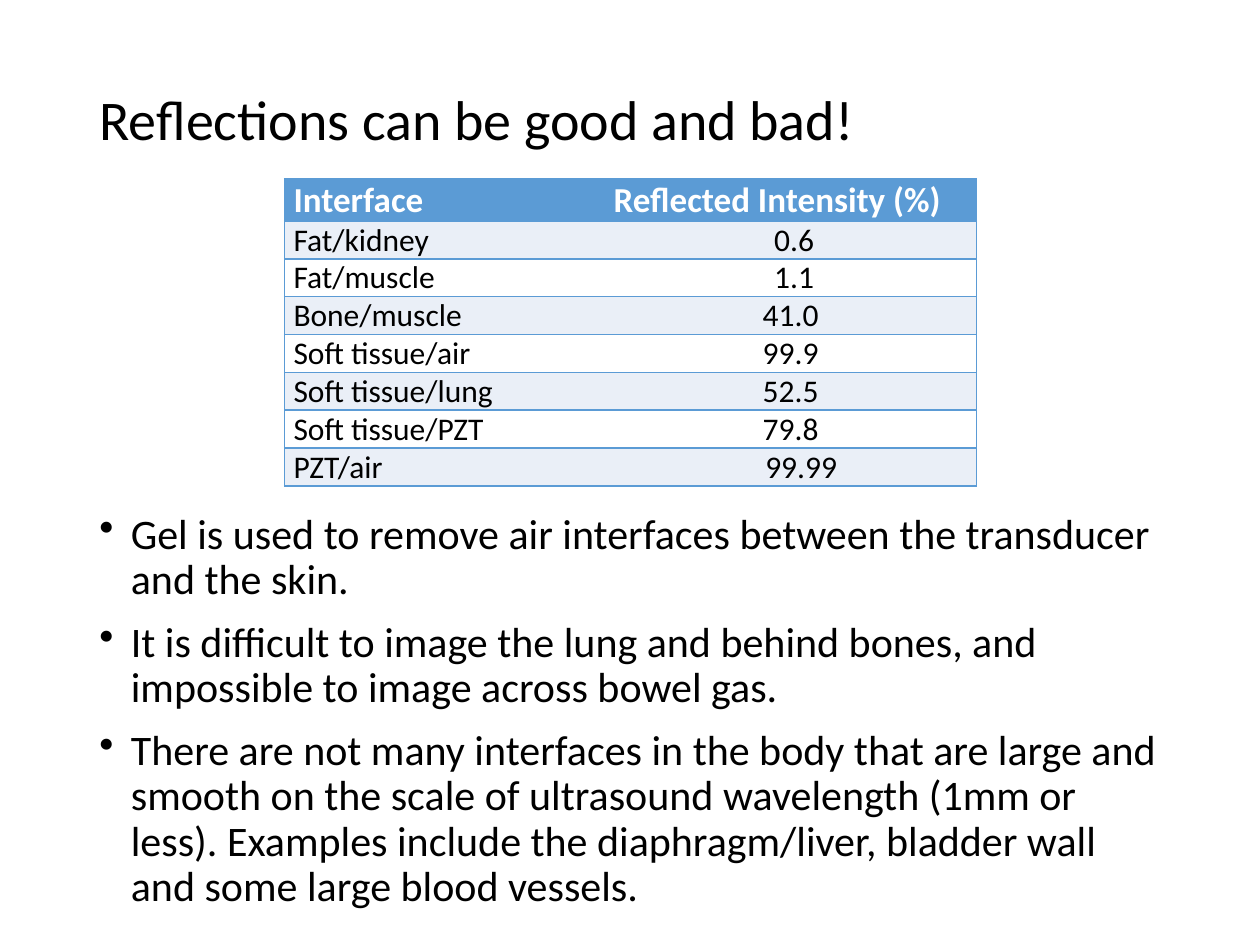
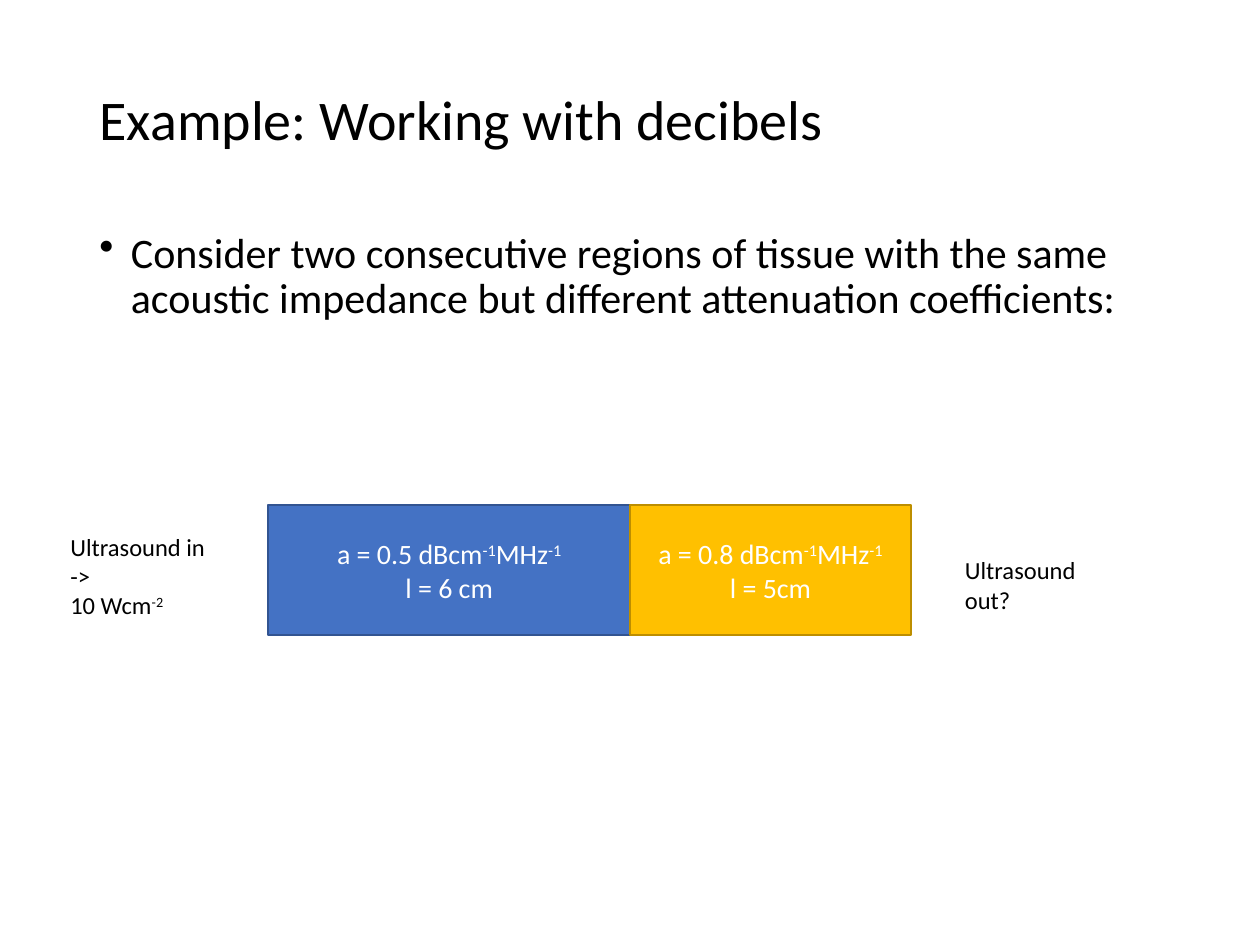
"""Build two ultrasound slides: reflections at interfaces and working with decibels."""
from dataclasses import dataclass
from typing import Optional

import pptx
import pptx.dml.color
import pptx.enum.shapes
import pptx.enum.text
import pptx.oxml
import pptx.oxml.ns
import pptx.util

Align = pptx.enum.text.PP_ALIGN
Anchor = pptx.enum.text.MSO_ANCHOR


@dataclass(frozen=True)
class Theme:
    """Colours, type sizes and spacing shared by the slides."""
    font: str = "Calibri"
    ink: str = "000000"
    paper: str = "FFFFFF"
    accent: str = "5B9BD5"
    band: str = "EAEFF7"
    title: int = 32
    body: int = 24
    header: int = 20
    cell: int = 18
    region: int = 16
    label: int = 14
    tight: float = 0.9
    body_gap: int = 10


THEME = Theme()
COLUMNS, ROWS = 100, 75
SLIDE_WIDTH, SLIDE_HEIGHT = pptx.util.Inches(10), pptx.util.Inches(7.5)
MARGIN, CONTENT = 6.9, 86.2


def across(columns: float) -> int:
    """Turn grid columns into a length."""
    return round(SLIDE_WIDTH * columns / COLUMNS)


def down(rows: float) -> int:
    """Turn grid rows into a length."""
    return round(SLIDE_HEIGHT * rows / ROWS)


@dataclass(frozen=True)
class Area:
    """A rectangle on the slide grid."""
    left: float
    top: float
    width: float
    height: float

    def lengths(self) -> tuple:
        """Return left, top, width and height as lengths."""
        return across(self.left), down(self.top), across(self.width), down(self.height)


@dataclass(frozen=True)
class Region:
    """A block of tissue with its attenuation and length."""
    width: float
    fill: str
    line: str
    lines: tuple


@dataclass(frozen=True)
class Label:
    """A caption beside the tissue regions."""
    area: Area
    lines: tuple


@dataclass(frozen=True)
class Reflection:
    """One interface, its reflected intensity and the indent of that value."""
    interface: str
    intensity: str
    indent: float = 0


TITLE_AREA = Area(MARGIN, 4, CONTENT, 11.5)
TABLE_AREA = Area(22.6, 14.2, 54.9, 24.3)
TABLE_COLUMNS = (25.4, 29.5)
HEADER_HEIGHT, ROW_HEIGHT = 3.3, 3
CELL_INSET = 0.7
SPACE = 0.56
HEADINGS = ("Interface", "Reflected Intensity (%)")
REFLECTIONS = (
    Reflection("Fat/kidney", "0.6", SPACE),
    Reflection("Fat/muscle", "1.1", SPACE),
    Reflection("Bone/muscle", "41.0"),
    Reflection("Soft tissue/air", "99.9"),
    Reflection("Soft tissue/lung", "52.5"),
    Reflection("Soft tissue/PZT", "79.8"),
    Reflection("PZT/air", "99.99", 3 * SPACE),
)
REFLECTION_POINTS = (
    "Gel is used to remove air interfaces between the transducer and the skin.",
    "It is difficult to image the lung and behind bones, and impossible to image across bowel gas.",
    "There are not many interfaces in the body that are large and smooth on the scale of ultrasound "
    "wavelength (1mm or less). Examples include the diaphragm/liver, bladder wall and some large "
    "blood vessels.",
)
DECIBEL_POINTS = (
    "Consider two consecutive regions of tissue with the same acoustic impedance but different "
    "attenuation coefficients:",
)
REGIONS_LEFT, REGIONS_TOP, REGIONS_HEIGHT = 21.3, 40.1, 10.3
REGIONS = (
    Region(28.7, "4472C4", "325491", ("a = 0.5 dBcm^-1^MHz^-1", "l = 6 cm")),
    Region(22.3, "FFC000", "BD8E00", ("a = 0.8 dBcm^-1^MHz^-1", "l = 5cm")),
)
LABELS = (
    Label(Area(4.6, 41.7, 14, 5.7), ("Ultrasound in ->", "10 Wcm^-2")),
    Label(Area(75.6, 43.6, 14, 3.4), ("Ultrasound out?",)),
)


def colour(value: str) -> pptx.dml.color.RGBColor:
    """Turn a hex string into a colour."""
    return pptx.dml.color.RGBColor.from_string(value)


def add_spans(paragraph, text: str) -> None:
    """Add runs, raising every second part between carets."""
    for index, part in enumerate(text.split("^")):
        if part:
            span = paragraph.add_run()
            span.text = part
            if index % 2:
                span._r.get_or_add_rPr().set("baseline", "30000")


def add_bullet(paragraph) -> None:
    """Give a paragraph a hanging round bullet."""
    properties = paragraph._p.get_or_add_pPr()
    hang = pptx.util.Inches(0.25)
    properties.set("marL", str(hang))
    properties.set("indent", str(-hang))
    bullet = pptx.oxml.parse_xml(f'<a:buChar {pptx.oxml.ns.nsdecls("a")} char="•"/>')
    properties.append(bullet)


def write(frame, lines: tuple, size: int, ink: str = THEME.ink, align=Align.LEFT,
          bold: bool = False, spacing: Optional[float] = None, gap: int = 0,
          bulleted: bool = False) -> None:
    """Fill a text frame with one styled paragraph per line."""
    for index, line in enumerate(lines):
        para = frame.add_paragraph() if index else frame.paragraphs[0]
        para.alignment = align
        if spacing:
            para.line_spacing = spacing
        para.space_before = pptx.util.Pt(gap if index else 0)
        if bulleted:
            add_bullet(para)
        para.font.name = THEME.font
        para.font.size = pptx.util.Pt(size)
        para.font.bold = bold
        para.font.color.rgb = colour(ink)
        add_spans(para, line)


def add_titled_slide(deck, title: str):
    """Add a title-only slide with the shared title style."""
    slide = deck.slides.add_slide(deck.slide_layouts[5])
    holder = slide.shapes.title
    holder.left, holder.top, holder.width, holder.height = TITLE_AREA.lengths()
    frame = holder.text_frame
    frame.auto_size = pptx.enum.text.MSO_AUTO_SIZE.NONE
    frame.vertical_anchor = Anchor.MIDDLE
    write(frame, (title,), THEME.title, spacing=THEME.tight)
    return slide


def add_text(slide, area: Area, lines: tuple, size: int, **style) -> None:
    """Add a wrapping text box."""
    frame = slide.shapes.add_textbox(*area.lengths()).text_frame
    frame.word_wrap = True
    write(frame, lines, size, **style)


def add_points(slide, area: Area, points: tuple) -> None:
    """Add the bulleted body text."""
    add_text(slide, area, points, THEME.body, spacing=THEME.tight, gap=THEME.body_gap,
             bulleted=True)


def set_borders(cell, outer: str) -> None:
    """Rule a cell above, below and on its outer side only."""
    properties = cell._tc.get_or_add_tcPr()
    for edge in ("L", "R", "T", "B"):
        paint = "<a:noFill/>"
        if edge in (outer, "T", "B"):
            paint = f'<a:solidFill><a:srgbClr val="{THEME.accent}"/></a:solidFill>'
        properties.append(pptx.oxml.parse_xml(
            f'<a:ln{edge} {pptx.oxml.ns.nsdecls("a")} w="{pptx.util.Pt(1)}">{paint}</a:ln{edge}>'))


def fill_cell(cell, text: str, outer: str, fill: str, size: int, indent: float = 0,
              **style) -> None:
    """Format one table cell and write its text."""
    set_borders(cell, outer)
    cell.fill.solid()
    cell.fill.fore_color.rgb = colour(fill)
    cell.margin_left, cell.margin_right = across(CELL_INSET + indent), across(CELL_INSET)
    cell.margin_top = cell.margin_bottom = 0
    write(cell.text_frame, (text,), size, **style)


def add_reflection_table(slide) -> None:
    """Add the table of reflected intensities."""
    table = slide.shapes.add_table(len(REFLECTIONS) + 1, len(HEADINGS),
                                   *TABLE_AREA.lengths()).table
    for column, width in zip(table.columns, TABLE_COLUMNS):
        column.width = across(width)
    for index, row in enumerate(table.rows):
        row.height = down(ROW_HEIGHT if index else HEADER_HEIGHT)
    for index, (heading, outer) in enumerate(zip(HEADINGS, "LR")):
        fill_cell(table.cell(0, index), heading, outer, THEME.accent, THEME.header,
                  ink=THEME.paper, bold=True)
    for index, reflection in enumerate(REFLECTIONS, start=1):
        fill = THEME.band if index % 2 else THEME.paper
        fill_cell(table.cell(index, 0), reflection.interface, "L", fill, THEME.cell)
        fill_cell(table.cell(index, 1), reflection.intensity, "R", fill, THEME.cell,
                  indent=reflection.indent, align=Align.CENTER)


def add_regions(slide) -> None:
    """Add the tissue regions side by side."""
    left = REGIONS_LEFT
    for region in REGIONS:
        area = Area(left, REGIONS_TOP, region.width, REGIONS_HEIGHT)
        box = slide.shapes.add_shape(pptx.enum.shapes.MSO_SHAPE.RECTANGLE, *area.lengths())
        box.shadow.inherit = False
        box.fill.solid()
        box.fill.fore_color.rgb = colour(region.fill)
        box.line.color.rgb = colour(region.line)
        box.line.width = pptx.util.Pt(1)
        box.text_frame.word_wrap = True
        box.text_frame.vertical_anchor = Anchor.MIDDLE
        write(box.text_frame, region.lines, THEME.region, ink=THEME.paper, align=Align.CENTER)
        left += region.width


def main() -> None:
    """Build and save the deck."""
    deck = pptx.Presentation()
    deck.slide_width, deck.slide_height = SLIDE_WIDTH, SLIDE_HEIGHT

    reflections = add_titled_slide(deck, "Reflections can be good and bad!")
    add_points(reflections, Area(MARGIN, 40.2, CONTENT, 36.2), REFLECTION_POINTS)
    add_reflection_table(reflections)

    decibels = add_titled_slide(deck, "Example: Working with decibels")
    add_points(decibels, Area(MARGIN, 17.9, CONTENT, 49.6), DECIBEL_POINTS)
    add_regions(decibels)
    for label in LABELS:
        add_text(decibels, label.area, label.lines, THEME.label)

    deck.save("out.pptx")


if __name__ == "__main__":
    main()
